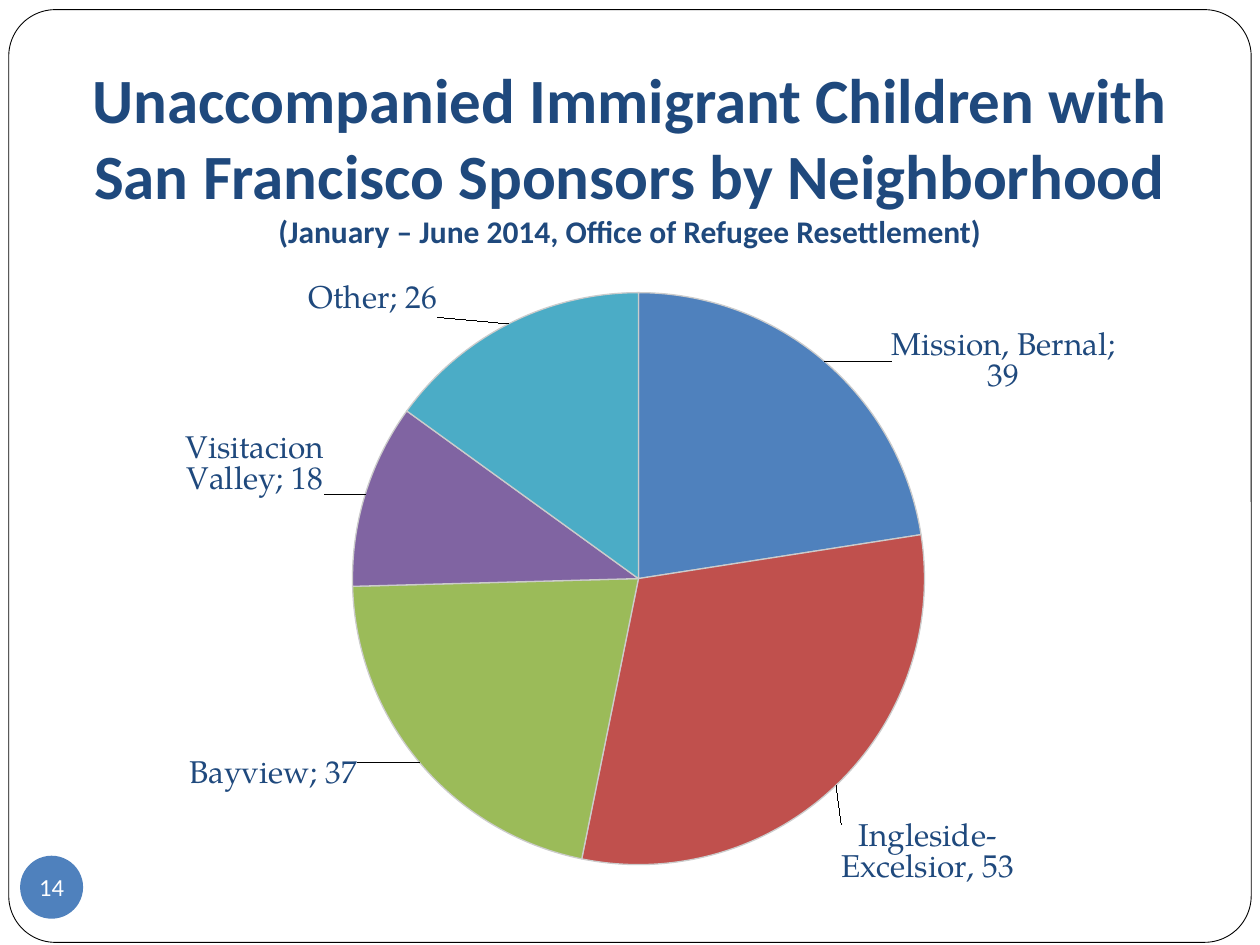
from lxml import etree
from pptx import Presentation, util as u
from pptx.chart import data as chart_data
from pptx.dml.color import RGBColor
from pptx.enum import chart as charts, shapes, text
from pptx.oxml import ns

Pt = u.Pt
NAVY, BLUE, WHITE = "1F497D", "4F81BD", "FFFFFF"
SERIF = "TeX Gyre Pagella"


def color(value):
    return RGBColor.from_string(value)


def write(para, words, font="Calibri", size=18, ink=NAVY, bold=False):
    span = para.add_run()
    span.text = words
    span.font.name, span.font.size, span.font.bold = font, Pt(size), bold
    span.font.color.rgb = color(ink)
    para.alignment = text.PP_ALIGN.CENTER


deck = Presentation()
deck.slide_width, deck.slide_height = Pt(720), Pt(540)
page = deck.slides.add_slide(deck.slide_layouts[6])

# Page frame
frame = page.shapes.add_shape(shapes.MSO_SHAPE.ROUNDED_RECTANGLE,
                              Pt(5), Pt(5.5), Pt(710), Pt(533))
frame.adjustments[0] = 0.05
frame.shadow.inherit = False
frame.fill.solid()
frame.fill.fore_color.rgb = color(WHITE)
frame.line.color.rgb = color("000000")
frame.line.width = Pt(0.5)

# Title
title = page.shapes.add_textbox(Pt(18), Pt(30), Pt(684), Pt(120)).text_frame
title.word_wrap = True
title.vertical_anchor = text.MSO_ANCHOR.BOTTOM
title.margin_bottom = Pt(7.2)
para = title.paragraphs[0]
write(para, "Unaccompanied Immigrant Children with San Francisco Sponsors "
            "by Neighborhood", size=36, bold=True)
para.add_line_break()
write(para, "(January – June 2014, Office of Refugee Resettlement)", bold=True)

# Pie chart: name, value, slice colour, label shift as a share of the chart
slices = [
    ("Mission, Bernal", 39, BLUE, 0.055, 0.06),
    ("Ingelside-Excelsior", 53, "C0504D", 0, 0.05),
    ("Bayview", 37, "9BBB59", -0.05, -0.01),
    ("Visitacion Valley", 18, "8064A2", -0.03, 0.01),
    ("Other", 26, "4BACC6", -0.06, 0),
]
data = chart_data.CategoryChartData()
data.categories = [row[0] for row in slices]
data.add_series("Series 1", [row[1] for row in slices])
chart = page.shapes.add_chart(charts.XL_CHART_TYPE.PIE, Pt(39.6), Pt(138.2),
                              Pt(647.3), Pt(382.3), data).chart
chart.has_legend = chart.has_title = False
chart.font.name, chart.font.size = SERIF, Pt(18)
plot = chart.plots[0]
plot.vary_by_categories = True
series = plot.series[0]

labels = series.data_labels
labels.show_value = labels.show_category_name = True
labels.position = charts.XL_LABEL_POSITION.OUTSIDE_END

for index, (name, value, fill, shift_x, shift_y) in enumerate(slices):
    point = series.points[index]
    point.format.fill.solid()
    point.format.fill.fore_color.rgb = color(fill)
    point.format.line.color.rgb = color("CCCCCC")
    point.format.line.width = Pt(0.75)
    label = point.data_label
    if name.startswith("Ingelside"):
        write(label.text_frame.paragraphs[0], "Ingleside-Excelsior, 53", font=SERIF)
    else:
        label.font.name, label.font.size = SERIF, Pt(18)
        label.font.color.rgb = color(NAVY)
    label.position = charts.XL_LABEL_POSITION.OUTSIDE_END


def add_layout(parent, position, **values):
    for old in parent.findall(ns.qn("c:layout")):
        parent.remove(old)
    layout = etree.Element(ns.qn("c:layout"))
    manual = etree.SubElement(layout, ns.qn("c:manualLayout"))
    for key, value in values.items():
        etree.SubElement(manual, ns.qn("c:" + key)).set("val", str(value))
    parent.insert(position, layout)


# Label shifts, separators and the place of the pie
group = series._element.find(ns.qn("c:dLbls"))
for item, row in zip(group.findall(ns.qn("c:dLbl")), slices):
    add_layout(item, 1, x=row[3], y=row[4])
    item.find(ns.qn("c:showCatName")).set("val", "1")
for item in [group, *group.findall(ns.qn("c:dLbl"))]:
    separator = etree.Element(ns.qn("c:separator"))
    separator.text = "; "
    item.find(ns.qn("c:showBubbleSize")).addnext(separator)
area = plot._element.getparent()
add_layout(area, 0, layoutTarget="inner", xMode="edge", yMode="edge",
           x=0.25, y=0.076, w=0.505, h=0.855)

# Page number
badge = page.shapes.add_shape(shapes.MSO_SHAPE.OVAL, Pt(11.5), Pt(489), Pt(36), Pt(36))
badge.shadow.inherit = False
badge.fill.solid()
badge.fill.fore_color.rgb = color(BLUE)
badge.line.fill.background()
number = badge.text_frame
number.margin_left = number.margin_right = number.margin_top = number.margin_bottom = 0
number.word_wrap = False
number.vertical_anchor = text.MSO_ANCHOR.MIDDLE
write(number.paragraphs[0], "14", size=14, ink=WHITE)

deck.save("out.pptx")
